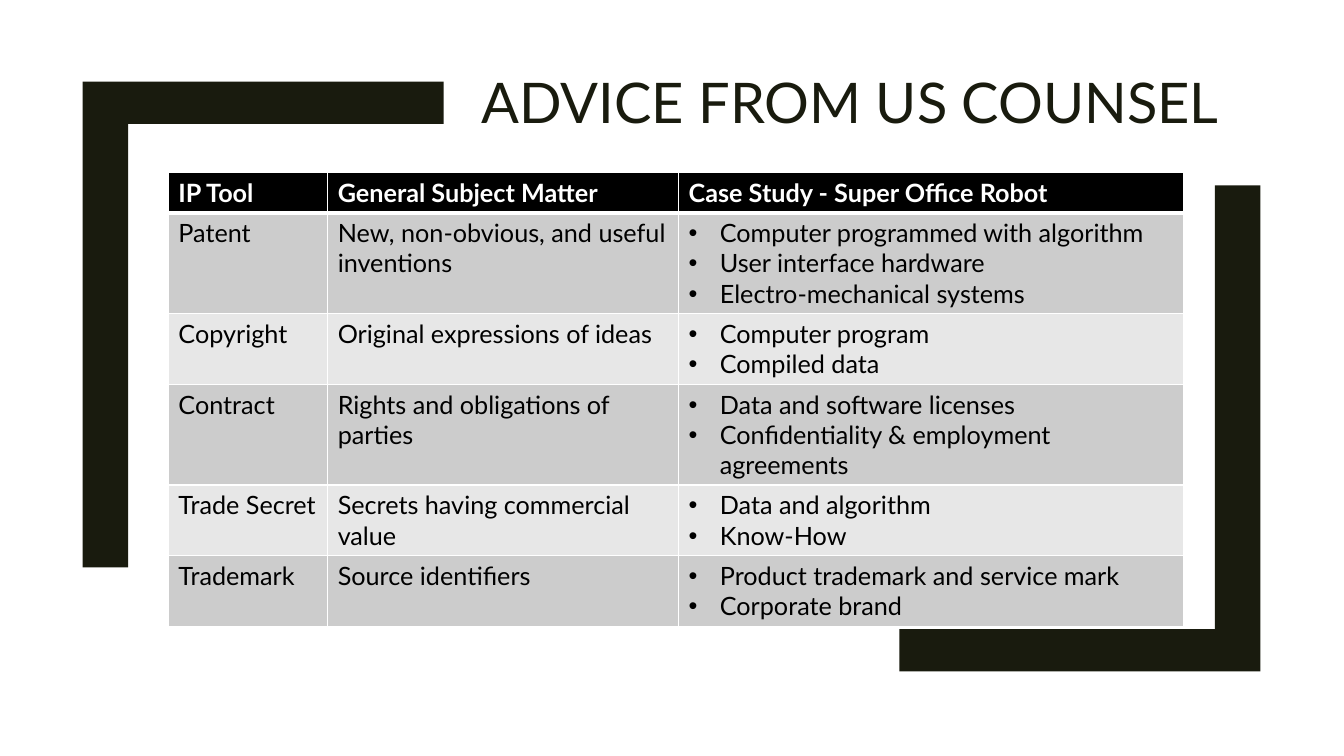
import pptx
import pptx.dml.color
import pptx.enum.text
import pptx.oxml
import pptx.oxml.ns
import pptx.util

Inches = pptx.util.Inches
Pt = pptx.util.Pt
FONT = "Lato"
COLORS = {
    "ink": "191B0E",
    "head": "000000",
    "text": "000000",
    "white": "FFFFFF",
    "odd": "CCCCCC",
    "even": "E7E7E7",
}
HEADS = ["IP Tool", "General Subject Matter", "Case Study - Super Office Robot"]
TOOLS = [
    ("Patent", "New, non-obvious, and useful inventions",
     ["Computer programmed with algorithm", "User interface hardware",
      "Electro-mechanical systems"], 3),
    ("Copyright", "Original expressions of ideas",
     ["Computer program", "Compiled data"], 2),
    ("Contract", "Rights and obligations of parties",
     ["Data and software licenses", "Confidentiality & employment agreements"], 3),
    ("Trade Secret", "Secrets having commercial value",
     ["Data and algorithm", "Know-How"], 2),
    ("Trademark", "Source identifiers",
     ["Product trademark and service mark", "Corporate brand"], 2),
]


def color(name):
    return pptx.dml.color.RGBColor.from_string(COLORS[name])


def add_run(para, text, size, tint, bold=False):
    run = para.add_run()
    run.text = text
    run.font.name = FONT
    run.font.size = Pt(size)
    run.font.bold = bold
    run.font.color.rgb = color(tint)


def add_corner(slide, left, top, width, height, turned=False):
    side, base = 0.45, 0.42
    spots = [(width - side, 0), (width, 0), (width, height), (0, height),
             (0, height - base), (width - side, height - base)]
    if turned:
        spots = [(width - x, height - y) for x, y in spots]
    spots = [(Inches(left + x), Inches(top + y)) for x, y in spots]
    form = slide.shapes.build_freeform(*spots[0])
    form.add_line_segments(spots[1:], close=True)
    shape = form.convert_to_shape()
    shape.shadow.inherit = False
    shape.fill.solid()
    shape.fill.fore_color.rgb = color("ink")
    shape.line.fill.background()


def add_title(slide, left, top, width, height):
    box = slide.shapes.add_textbox(*map(Inches, (left, top, width, height)))
    frame = box.text_frame
    frame.word_wrap = True
    frame.vertical_anchor = pptx.enum.text.MSO_ANCHOR.BOTTOM
    para = frame.paragraphs[0]
    para.line_spacing = 0.89
    add_run(para, "ADVICE FROM US COUNSEL", 40, "ink")


def add_edge(cell, side, width):
    props = cell._tc.get_or_add_tcPr()
    props.append(pptx.oxml.parse_xml(
        f'<a:ln{side} {pptx.oxml.ns.nsdecls("a")} w="{Pt(width)}"><a:solidFill>'
        f'<a:srgbClr val="{COLORS["white"]}"/></a:solidFill></a:ln{side}>'))


def add_bullet(para):
    props = para._p.get_or_add_pPr()
    props.set("marL", str(Inches(0.31)))
    props.set("indent", str(Inches(-0.31)))
    ns = pptx.oxml.ns.nsdecls("a")
    props.append(pptx.oxml.parse_xml(f'<a:buFont {ns} typeface="Arial"/>'))
    props.append(pptx.oxml.parse_xml(f'<a:buChar {ns} char="•"/>'))


def fill_cell(cell, text, back, head):
    for side in "LRTB":
        thick = head and side == "B" or back == "odd-first" and side == "T"
        add_edge(cell, side, 3 if thick else 1)
    cell.fill.solid()
    cell.fill.fore_color.rgb = color(back)
    listed = isinstance(text, list)
    for i, item in enumerate(text if listed else [text]):
        frame = cell.text_frame
        para = frame.add_paragraph() if i else frame.paragraphs[0]
        if listed:
            add_bullet(para)
        add_run(para, item, 18, "white" if head else "text", head)


def add_tools(slide, left, top, width, height):
    rows = [HEADS] + [tool[:3] for tool in TOOLS]
    frame = slide.shapes.add_table(
        len(rows), len(HEADS), *map(Inches, (left, top, width, height)))
    table = frame.table
    for col, share in zip(table.columns, (1.58, 3.48, 5.01)):
        col.width = Inches(share)
    for row, lines in zip(table.rows, [1] + [tool[3] for tool in TOOLS]):
        row.height = Inches(0.1 + 0.3 * lines)
    for r, row in enumerate(rows):
        back = "head" if r == 0 else "odd" if r % 2 else "even"
        for c, text in enumerate(row):
            fill_cell(table.cell(r, c), text, back, r == 0)


def main():
    deck = pptx.Presentation()
    deck.slide_width = Inches(13.33)
    deck.slide_height = Inches(7.5)
    slide = deck.slides.add_slide(deck.slide_layouts[6])
    add_corner(slide, 8.92, 1.84, 3.58, 4.82)
    add_corner(slide, 0.82, 0.81, 3.58, 4.82, turned=True)
    add_title(slide, 4.68, 0.64, 7.73, 0.75)
    add_tools(slide, 1.67, 1.71, 10.07, 4.5)
    deck.save("out.pptx")


if __name__ == "__main__":
    main()
